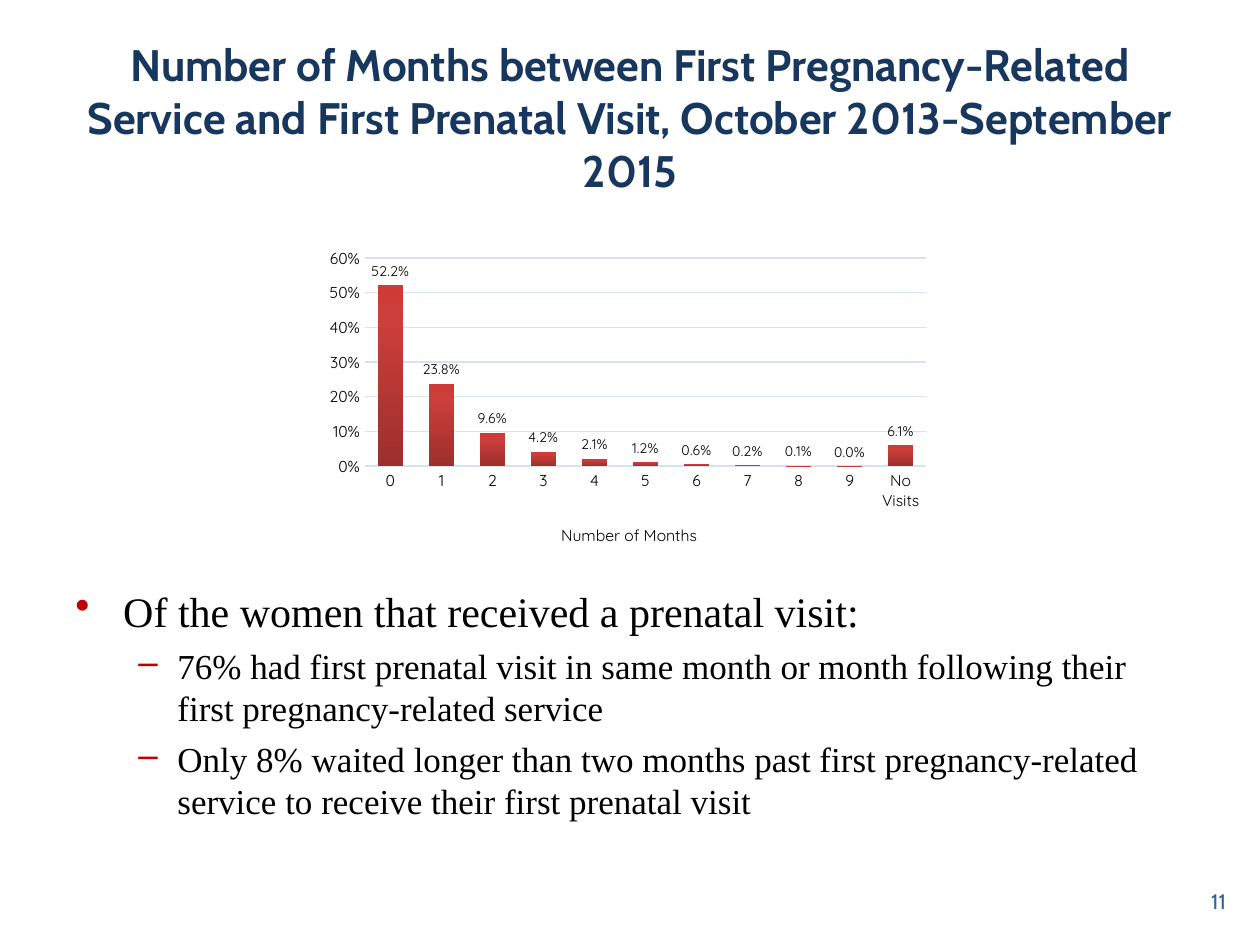
from copy import deepcopy
from dataclasses import dataclass

from lxml.etree import SubElement
from pptx import Presentation
from pptx.chart.data import CategoryChartData
from pptx.dml.color import RGBColor
from pptx.enum.chart import XL_CHART_TYPE, XL_LABEL_POSITION, XL_TICK_MARK
from pptx.enum.text import MSO_ANCHOR, PP_ALIGN
from pptx.oxml.ns import qn
from pptx.util import Inches, Pt


@dataclass(frozen=True)
class Theme:
    head: str = "Cabin"
    body: str = "Times New Roman"
    plot: str = "Quicksand"
    navy: str = "17375E"
    blue: str = "376092"
    black: str = "000000"
    red: str = "C00000"
    grid: str = "D4E3F4"
    bars: tuple = ((0, "9C2F2D"), (0.8, "CB3E3A"), (1, "CE3B37"))
    title: float = 25.2
    levels: tuple = (24, 20)
    page: float = 12
    axis: float = 9
    label: float = 8


THEME = Theme()

TITLE = ("Number of Months between First Pregnancy-Related Service "
         "and First Prenatal Visit, October 2013-September 2015")
POINTS = (
    (0, "Of the women that received a prenatal visit:"),
    (1, "76% had first prenatal visit in same month or month following "
        "their first pregnancy-related service"),
    (1, "Only 8% waited longer than two months past first "
        "pregnancy-related service to receive their first prenatal visit"),
)
# Marker, left margin and hanging indent for each level
MARKS = (("•", 0.38, 0.38), ("–", 0.81, 0.31))
MONTHS = [str(n) for n in range(10)] + ["No Visits"]
SHARES = (0.522, 0.238, 0.096, 0.042, 0.021, 0.012,
          0.006, 0.002, 0.001, 0, 0.061)


def style(font, name, size, color, bold=False):
    font.name, font.size, font.bold = name, Pt(size), bold
    font.color.rgb = RGBColor.from_string(color)


def add_box(slide, area, anchor=MSO_ANCHOR.TOP):
    box = slide.shapes.add_textbox(*map(Inches, area))
    frame = box.text_frame
    frame.word_wrap = True
    frame.vertical_anchor = anchor
    return frame


def add_line(slide, area, text, align, size, color, bold=False):
    frame = add_box(slide, area, MSO_ANCHOR.MIDDLE)
    frame.text = text
    para = frame.paragraphs[0]
    para.alignment = align
    style(para.runs[0].font, THEME.head, size, color, bold)


def add_mark(para, level):
    mark, left, hang = MARKS[level]
    props = para._p.get_or_add_pPr()
    props.set("marL", str(Inches(left)))
    props.set("indent", str(-Inches(hang)))
    color = SubElement(props, qn("a:buClr"))
    SubElement(color, qn("a:srgbClr"), val=THEME.red)
    SubElement(props, qn("a:buChar"), char=mark)


def add_list(slide, area, points):
    frame = add_box(slide, area)
    for num, (level, text) in enumerate(points):
        para = frame.add_paragraph() if num else frame.paragraphs[0]
        para.text = text
        para.level = level
        if num:
            para.space_before = Pt(5)
        add_mark(para, level)
        style(para.runs[0].font, THEME.body, THEME.levels[level], THEME.black)


def place(layout, **spots):
    """Fix a chart part at fractions of the chart area."""
    manual = SubElement(layout, qn("c:manualLayout"))
    if "w" in spots:
        SubElement(manual, qn("c:layoutTarget"), val="inner")
    for key in ("x", "y"):
        SubElement(manual, qn(f"c:{key}Mode"), val="edge")
    for key, value in spots.items():
        SubElement(manual, qn(f"c:{key}"), val=str(value))


def get_layout(part, index):
    layout = part.find(qn("c:layout"))
    if layout is None:
        layout = part.makeelement(qn("c:layout"))
        part.insert(index, layout)
    return layout


def rule(line):
    line.color.rgb = RGBColor.from_string(THEME.grid)
    line.width = Pt(0.75)


def shade(series):
    fill = series.format.fill
    fill.gradient()
    fill.gradient_angle = 90
    stops = series._element.find(".//" + qn("a:gsLst"))
    stops.append(deepcopy(stops[0]))
    for stop, (spot, color) in zip(fill.gradient_stops, THEME.bars):
        stop.position = spot
        stop.color.rgb = RGBColor.from_string(color)


def set_axes(chart):
    months, shares = chart.category_axis, chart.value_axis
    for axis in (months, shares):
        axis.major_tick_mark = axis.minor_tick_mark = XL_TICK_MARK.NONE
        style(axis.tick_labels.font, THEME.plot, THEME.axis, THEME.black)

    months.has_major_gridlines = False
    rule(months.format.line)
    title = months.axis_title
    title.text_frame.text = "Number of Months"
    run = title.text_frame.paragraphs[0].runs[0]
    style(run.font, THEME.plot, THEME.axis, THEME.black)
    place(get_layout(title._element, 1), x=0.39, y=0.86)

    shares.minimum_scale, shares.maximum_scale = 0, 0.6
    shares.major_unit = 0.1
    shares.tick_labels.number_format = "0%"
    shares.tick_labels.number_format_is_linked = False
    shares.format.line.fill.background()
    rule(shares.major_gridlines.format.line)


def add_bars(slide, area):
    data = CategoryChartData(number_format="0.0%")
    data.categories = MONTHS
    data.add_series("Series 1", SHARES)
    chart = slide.shapes.add_chart(
        XL_CHART_TYPE.COLUMN_CLUSTERED, *map(Inches, area), data).chart
    chart.has_legend = chart.has_title = False
    style(chart.font, THEME.plot, THEME.axis, THEME.black)
    set_axes(chart)

    # Columns and their labels
    plot = chart.plots[0]
    plot.gap_width, plot.overlap = 100, -24
    plot.vary_by_categories = False
    shade(plot.series[0])
    labels = plot.series[0].data_labels
    labels.show_value = True
    labels.number_format = "0.0%"
    labels.number_format_is_linked = False
    labels.position = XL_LABEL_POSITION.OUTSIDE_END
    style(labels.font, THEME.plot, THEME.label, THEME.black)

    region = chart._chartSpace.find(".//" + qn("c:plotArea"))
    place(get_layout(region, 0), x=0.08, y=0.05, w=0.9, h=0.64)


def main():
    deck = Presentation()
    deck.slide_width, deck.slide_height = Inches(10), Inches(7.5)
    slide = deck.slides.add_slide(deck.slide_layouts[6])

    # Heading
    add_line(slide, (0.5, 0.3, 9, 1.25), TITLE, PP_ALIGN.CENTER,
             THEME.title, THEME.navy, bold=True)
    # Findings
    add_list(slide, (0.5, 4.6, 9, 2.1), POINTS)
    # Page number
    add_line(slide, (7.5, 6.95, 2.33, 0.4), "11", PP_ALIGN.RIGHT,
             THEME.page, THEME.blue)
    # Column chart
    add_bars(slide, (2.5, 1.92, 4.95, 2.58))

    deck.save("out.pptx")


if __name__ == "__main__":
    main()
